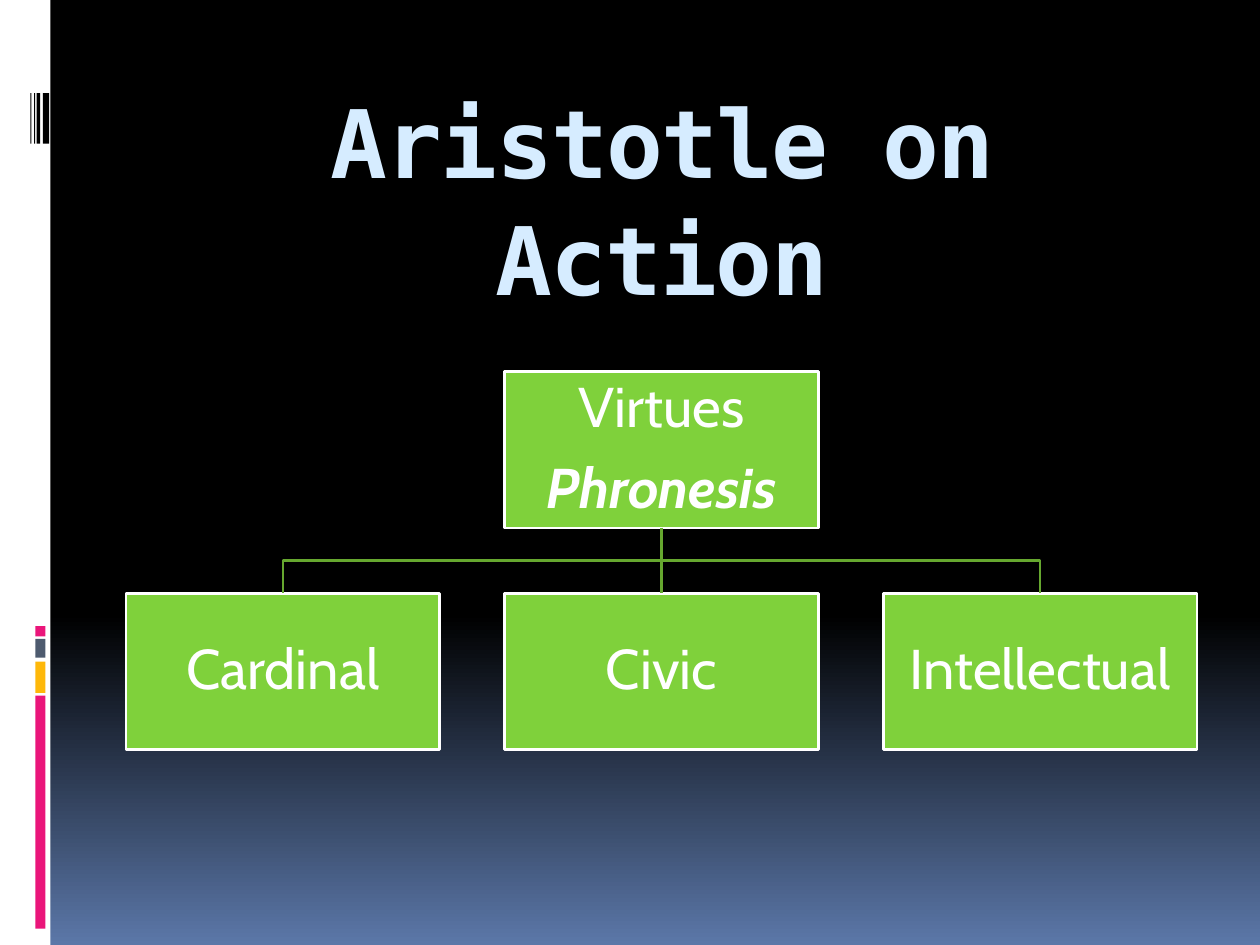
from copy import deepcopy

from pptx import Presentation
from pptx.dml.color import RGBColor
from pptx.enum.shapes import MSO_CONNECTOR, MSO_SHAPE
from pptx.enum.text import MSO_ANCHOR, MSO_AUTO_SIZE, PP_ALIGN
from pptx.oxml.ns import qn
from pptx.util import Inches, Pt

BLACK = RGBColor(0x00, 0x00, 0x00)
WHITE = RGBColor(0xFF, 0xFF, 0xFF)
BLUE = RGBColor(0x5B, 0x77, 0xA8)
PALE_BLUE = RGBColor(0xD6, 0xEC, 0xFF)
SLATE = RGBColor(0x4E, 0x5B, 0x6F)
PINK = RGBColor(0xEA, 0x15, 0x7A)
AMBER = RGBColor(0xFE, 0xB8, 0x0A)
GREEN = RGBColor(0x7F, 0xD1, 0x3B)
DARK_GREEN = RGBColor(0x66, 0xA7, 0x2F)

BOX_WIDTH, BOX_HEIGHT = 2.49, 1.24
LEFT, PITCH = 1, 3.005
ROOT_TOP, CHILD_TOP = 2.95, 4.71
CHILDREN = ["Cardinal", "Civic", "Intellectual"]

COLOR_BARS = [(4.97, 0.08, PINK), (5.07, 0.15, SLATE), (5.25, 0.25, AMBER), (5.52, 1.85, PINK)]
BARCODE = [(0.24, 0.01), (0.27, 0.01), (0.29, 0.03), (0.34, 0.05)]


def set_values(target, values):
    for name, value in values.items():
        setattr(target, name, value)


class SlideBuilder:
    title_font = {"name": "DejaVu Sans Mono", "size": Pt(54), "bold": True}
    box_font = {"name": "Cabin", "size": Pt(32)}
    box_paragraph = {"alignment": PP_ALIGN.CENTER, "line_spacing": 0.9, "space_after": Pt(11.2)}
    box_frame = {"word_wrap": True, "vertical_anchor": MSO_ANCHOR.MIDDLE}
    box_frame.update({f"margin_{side}": Inches(0.02) for side in ("left", "top", "right", "bottom")})
    title_frame = {"word_wrap": True, "auto_size": MSO_AUTO_SIZE.NONE,
                   "vertical_anchor": MSO_ANCHOR.TOP, "margin_top": Inches(0.08)}
    line_width = Pt(1.5)

    def __init__(self, page):
        self.page = page

    def background(self, stops):
        fill = self.page.background.fill
        fill.gradient()
        fill.gradient_angle = 270
        stop_list = self.page.background._cSld.find(".//" + qn("a:gsLst"))
        stop_list.insert(0, deepcopy(stop_list[0]))
        for stop, (position, color) in zip(fill.gradient_stops, stops):
            stop.position = position
            stop.color.rgb = color

    def title(self, text, left, top, width, height):
        title = self.page.shapes.title
        set_values(title, {"left": Inches(left), "top": Inches(top),
                           "width": Inches(width), "height": Inches(height)})
        frame = title.text_frame
        set_values(frame, self.title_frame)
        para = frame.paragraphs[0]
        set_values(para, {"alignment": PP_ALIGN.CENTER, "line_spacing": 1.03})
        span = para.add_run()
        span.text = text
        set_values(span.font, self.title_font)
        span.font.color.rgb = PALE_BLUE
        span.font._element.set("spc", "-100")

    def rectangle(self, left, top, width, height, color):
        box = self.page.shapes.add_shape(
            MSO_SHAPE.RECTANGLE, Inches(left), Inches(top), Inches(width), Inches(height))
        box.shadow.inherit = False
        box.fill.solid()
        box.fill.fore_color.rgb = color
        box.line.fill.background()
        return box

    def node(self, left, top, lines):
        """Draw a chart box; each line is its text and a dict of font values."""
        box = self.rectangle(left, top, BOX_WIDTH, BOX_HEIGHT, GREEN)
        self.stroke(box, WHITE)
        frame = box.text_frame
        set_values(frame, self.box_frame)
        for index, (text, emphasis) in enumerate(lines):
            para = frame.add_paragraph() if index else frame.paragraphs[0]
            set_values(para, self.box_paragraph)
            span = para.add_run()
            span.text = text
            set_values(span.font, {**self.box_font, **emphasis})
            span.font.color.rgb = WHITE
        return box

    def stroke(self, shape, color):
        shape.line.color.rgb = color
        shape.line.width = self.line_width

    def branch(self, parent, child):
        """Join the bottom of parent to the top of child, with a bend if needed."""
        start_x = parent.left + parent.width // 2
        end_x = child.left + child.width // 2
        start_y, end_y = parent.top + parent.height, child.top
        if start_x == end_x:
            line = self.page.shapes.add_connector(
                MSO_CONNECTOR.STRAIGHT, start_x, start_y, end_x, end_y)
            line.begin_connect(parent, 2)
            line.end_connect(child, 0)
            line._element.spPr.get_or_add_ln()
            self.stroke(line, DARK_GREEN)
            line._element.spPr.append(line._element.spPr.makeelement(qn("a:effectLst"), {}))
            return
        middle_y = (start_y + end_y) // 2
        outline = self.page.shapes.build_freeform(start_x, start_y)
        outline.add_line_segments(
            [(start_x, middle_y), (end_x, middle_y), (end_x, end_y)], close=False)
        line = outline.convert_to_shape()
        line.shadow.inherit = False
        line.fill.background()
        self.stroke(line, DARK_GREEN)


def main():
    deck = Presentation()
    deck.slide_width, deck.slide_height = Inches(10), Inches(7.5)
    builder = SlideBuilder(deck.slides.add_slide(deck.slide_layouts[5]))

    builder.background([(0, BLACK), (0.65, BLACK), (1, BLUE)])
    builder.rectangle(0, 0, 0.4, 7.5, WHITE)
    for top, height, color in COLOR_BARS:
        builder.rectangle(0.28, top, 0.08, height, color)
    for left, width in BARCODE:
        builder.rectangle(left, 0.74, width, 0.4, BLACK)

    builder.title("Aristotle on Action", 1, 0.56, 8.5, 1)
    root = builder.node(LEFT + PITCH, ROOT_TOP,
                        [("Virtues", {}), ("Phronesis", {"bold": True, "italic": True})])
    for column, name in enumerate(CHILDREN):
        child = builder.node(LEFT + column * PITCH, CHILD_TOP, [(name, {})])
        builder.branch(root, child)

    deck.save("out.pptx")


if __name__ == "__main__":
    main()
